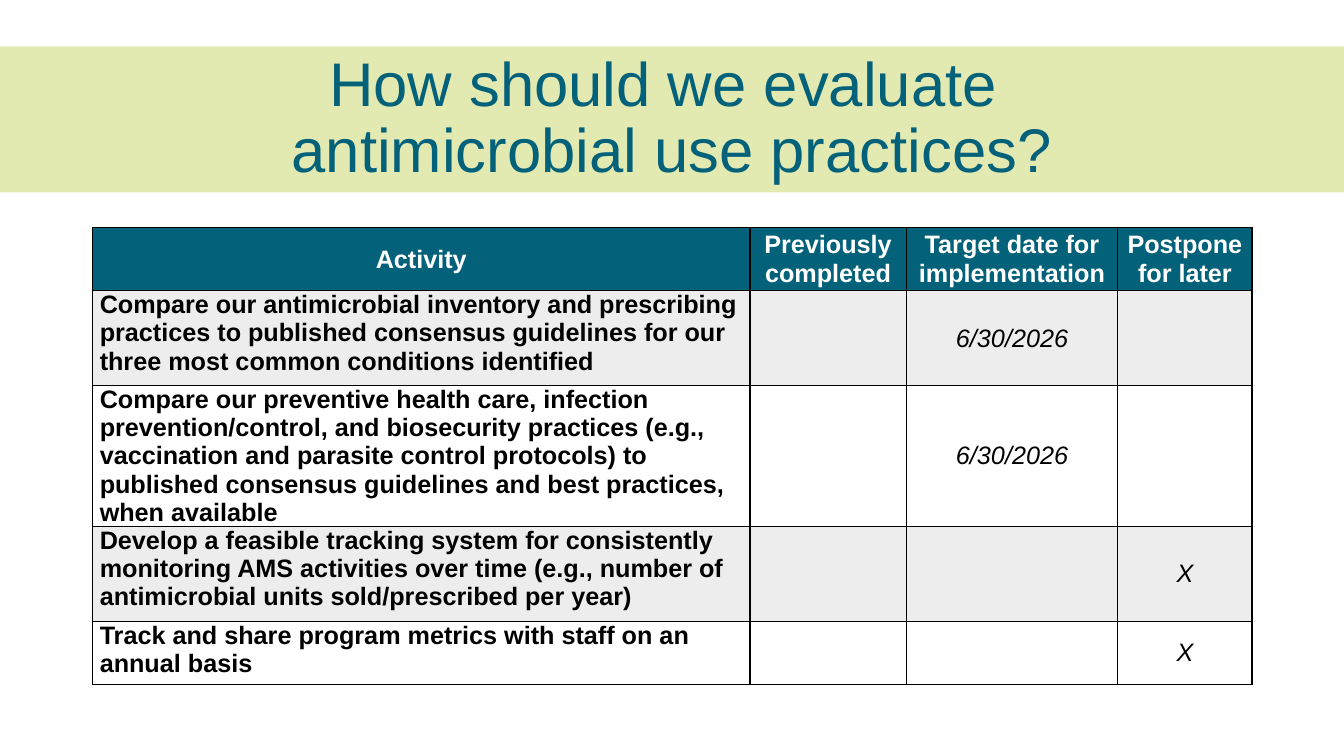
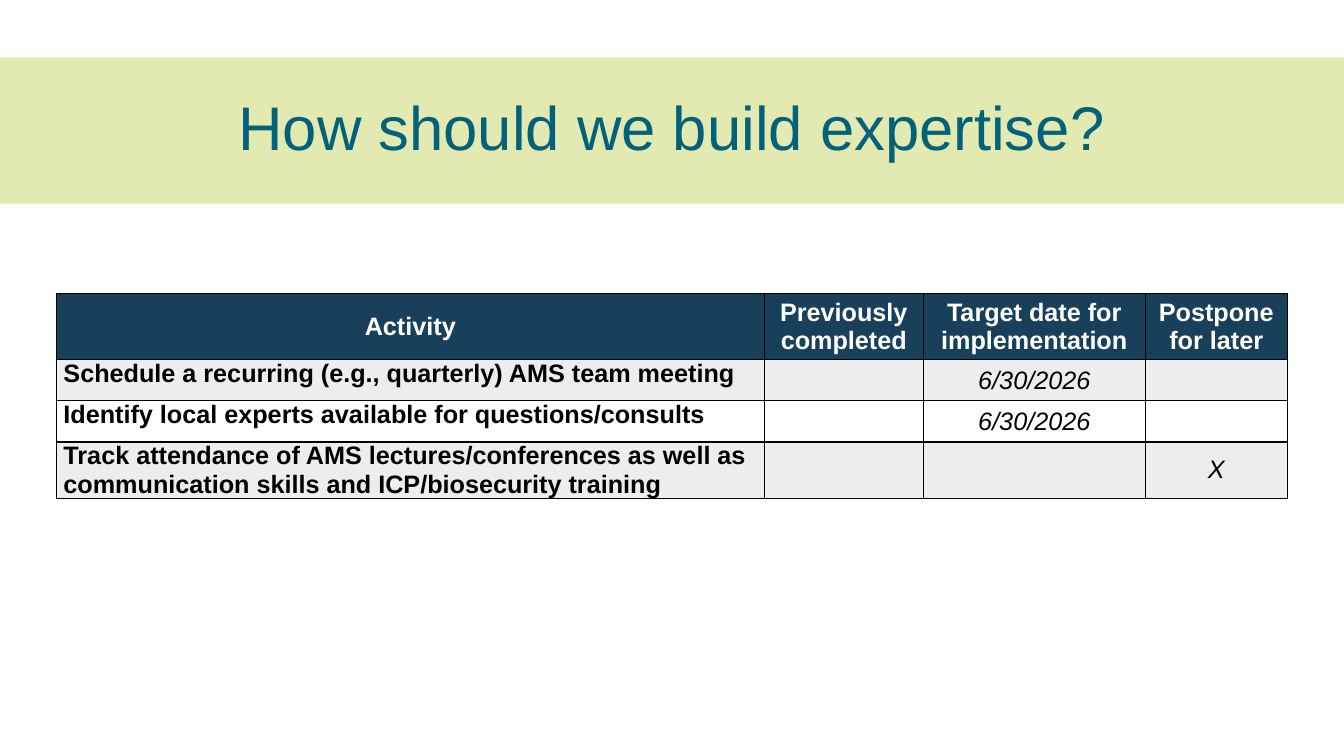
from lxml.etree import SubElement
from pptx import Presentation
from pptx.dml.color import RGBColor
from pptx.enum.text import MSO_ANCHOR, MSO_AUTO_SIZE, PP_ALIGN
from pptx.oxml import parse_xml
from pptx.oxml.ns import nsdecls, qn
from pptx.util import Inches, Pt

COLORS = {"teal": "03617A", "navy": "19405B", "lime": "C6D667",
          "gray": "A5A5A5", "white": "FFFFFF", "black": "000000"}
FONT = "Arial"
HEADERS = ["Activity", "Previously completed",
           "Target date for implementation", "Postpone for later"]
FORMATS = {
    "title": {"size": Pt(44), "bold": False, "color": "teal"},
    "header": {"size": Pt(18), "bold": True, "color": "white"},
    "activity": {"size": Pt(18), "bold": True, "color": "black"},
    "mark": {"size": Pt(18), "bold": False, "italic": True, "color": "black"},
}
TIGHT = {"margin_left": Inches(0.07), "margin_right": Inches(0.07),
         "margin_top": 0, "margin_bottom": 0}
DATE = "6/30/2026"


class Deck:
    """Style and current slide; lengths are percentages of the slide's size."""

    def __init__(self):
        self.prs = Presentation()
        self.prs.slide_width = Inches(13.33)
        self.prs.slide_height = Inches(7.5)

    def x(self, percent):
        return round(self.prs.slide_width * percent / 100)

    def y(self, percent):
        return round(self.prs.slide_height * percent / 100)

    def new_slide(self):
        self.s = self.prs.slides.add_slide(self.prs.slide_layouts[5])

    def paint(self, fill, props, color, opacity=100):
        """Fill solidly; props is the XML element that holds the fill."""
        fill.solid()
        fill.fore_color.rgb = RGBColor.from_string(COLORS[color])
        if opacity < 100:
            rgb = props.find(f"{qn('a:solidFill')}/{qn('a:srgbClr')}")
            SubElement(rgb, qn("a:alpha"), val=str(opacity * 1000))

    def set_text(self, tf, text, style, align):
        tf.text = text
        for p in tf.paragraphs:
            p.alignment = align
            for r in p.runs:
                r.font.name = FONT
                for name, value in FORMATS[style].items():
                    if name == "color":
                        r.font.color.rgb = RGBColor.from_string(COLORS[value])
                    else:
                        setattr(r.font, name, value)

    def title(self, text, top):
        sp = self.s.shapes.title
        box = {"left": 0, "top": self.y(top),
               "width": self.x(100), "height": self.y(19.33)}
        for name, value in box.items():
            setattr(sp, name, value)
        self.paint(sp.fill, sp._element.spPr, "lime", 50)
        tf = sp.text_frame
        tf.word_wrap = True
        tf.auto_size = MSO_AUTO_SIZE.NONE
        tf.vertical_anchor = MSO_ANCHOR.MIDDLE
        self.set_text(tf, text, "title", PP_ALIGN.CENTER)
        tf.paragraphs[0].line_spacing = 0.9

    def border(self, cell):
        props = cell._tc.get_or_add_tcPr()
        for i, side in enumerate(("lnL", "lnR", "lnT", "lnB")):
            props.insert(i, parse_xml(
                f'<a:{side} {nsdecls("a")} w="12700"><a:solidFill>'
                f'<a:srgbClr val="{COLORS["black"]}"/></a:solidFill></a:{side}>'))

    def cell(self, cell, text, i, j, header_color, header_margins):
        props = cell._tc.get_or_add_tcPr()
        if i == 0:
            self.paint(cell.fill, props, header_color)
        elif i % 2:
            self.paint(cell.fill, props, "gray", 20)
        else:
            cell.fill.background()
        self.border(cell)
        if not text:
            return
        for name, value in (TIGHT if i else header_margins).items():
            setattr(cell, name, value)
        is_activity = i > 0 and j == 0
        style = "header" if i == 0 else "activity" if is_activity else "mark"
        cell.vertical_anchor = MSO_ANCHOR.TOP if is_activity else MSO_ANCHOR.MIDDLE
        self.set_text(cell.text_frame, text, style,
                      PP_ALIGN.LEFT if is_activity else PP_ALIGN.CENTER)

    def table(self, left, top, cols, heights, rows, header_color, header_margins):
        frame = self.s.shapes.add_table(
            len(heights), len(cols), self.x(left), self.y(top),
            self.x(sum(cols)), self.y(sum(heights)))
        table = frame.table
        table.first_row = table.horz_banding = False
        for column, width in zip(table.columns, cols):
            column.width = self.x(width)
        for row, height in zip(table.rows, heights):
            row.height = self.y(height)
        for i, texts in enumerate([HEADERS] + rows):
            for j, text in enumerate(texts):
                self.cell(table.cell(i, j), text, i, j,
                          header_color, header_margins)


def main():
    deck = Deck()

    deck.new_slide()
    deck.title("How should we evaluate \vantimicrobial use practices?", 6.13)
    deck.table(6.9, 30.13, [48.9, 11.63, 15.75, 9.98],
               [8.35, 12.53, 18.67, 12.53, 8.35], [
        ["Compare our antimicrobial inventory and prescribing practices to "
         "published consensus guidelines for our three most common conditions "
         "identified", "", DATE, ""],
        ["Compare our preventive health care, infection prevention/control, and "
         "biosecurity practices (e.g., vaccination and parasite control "
         "protocols) to published consensus guidelines and best practices, when "
         "available", "", DATE, ""],
        ["Develop a feasible tracking system for consistently monitoring AMS "
         "activities over time (e.g., number of antimicrobial units "
         "sold/prescribed per year)", "", "", "X"],
        ["Track and share program metrics with staff on an annual basis",
         "", "", "X"],
    ], "teal", TIGHT)

    deck.new_slide()
    deck.title("How should we build expertise?", 7.6)
    deck.table(4.2, 38.8, [52.66, 11.85, 16.5, 10.58],
               [8.75, 5.43, 5.43, 7.47], [
        ["Schedule a recurring (e.g., quarterly) AMS team meeting", "", DATE, ""],
        ["Identify local experts available for questions/consults", "", DATE, ""],
        ["Track attendance of AMS lectures/conferences as well as communication "
         "skills and ICP/biosecurity training", "", "", "X"],
    ], "navy", {})

    deck.prs.save("out.pptx")


if __name__ == "__main__":
    main()
